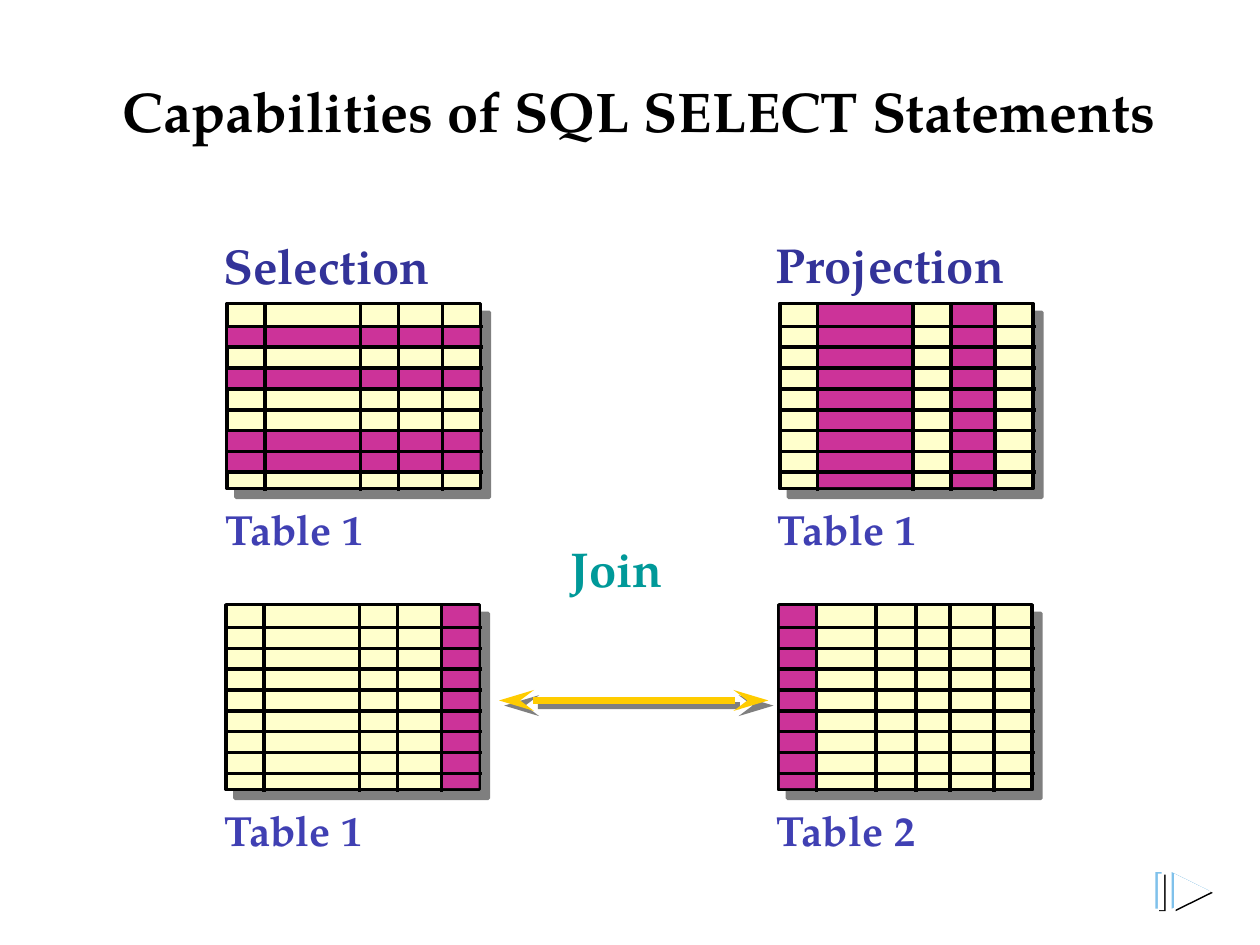
from dataclasses import dataclass

from lxml import etree
from pptx import Presentation
from pptx.dml.color import RGBColor
from pptx.enum import shapes, text
from pptx.oxml import ns
from pptx.util import Cm, Pt


@dataclass(frozen=True)
class Theme:
    font: str = "TeX Gyre Pagella"
    ink: str = "000000"
    paper: str = "FFFFFF"
    cell: str = "FFFFCC"
    highlight: str = "CC3399"
    heading: str = "333399"
    caption: str = "4040B3"
    join: str = "009999"
    arrow: str = "FFCC00"
    button: str = "7FC1EB"
    title_size: int = 32
    heading_size: int = 28
    caption_size: int = 24
    rule: int = 2
    arrow_width: int = 4


@dataclass(frozen=True)
class Box:
    left: float
    top: float
    width: float
    height: float

    def within(self, left, top, width, height):
        return Box(self.left + left, self.top + top, width, height)

    def emu(self):
        return Cm(self.left), Cm(self.top), Cm(self.width), Cm(self.height)


THEME = Theme()
HEADER_HEIGHT = 0.46
ROW_HEIGHT = 0.42
ROWS = 9
FIVE_COLUMNS = (0, 0.76, 2.69, 3.45, 4.34, 5.11)
SIX_COLUMNS = (0, 0.76, 1.96, 2.77, 3.45, 4.34, 5.11)


def rgb(value):
    return RGBColor.from_string(value)


def write(frame, words, *, size, color, align=text.PP_ALIGN.LEFT):
    paragraph = frame.paragraphs[0]
    paragraph.alignment = align
    run = paragraph.add_run()
    run.text = words
    run.font.name = THEME.font
    run.font.size = Pt(size)
    run.font.bold = True
    run.font.color.rgb = rgb(color)


def label(slide, box, words, **style):
    frame = slide.shapes.add_textbox(*box.emu()).text_frame
    frame.word_wrap = False
    frame.auto_size = text.MSO_AUTO_SIZE.SHAPE_TO_FIT_TEXT
    write(frame, words, **style)


def cast_shadow(effects, distance):
    shadow = etree.SubElement(effects, ns.qn("a:outerShdw"), dist=str(Pt(distance)),
                              dir="2700000", algn="ctr", rotWithShape="0")
    color = etree.SubElement(shadow, ns.qn("a:srgbClr"), val=THEME.ink)
    etree.SubElement(color, ns.qn("a:alpha"), val="50000")


def paint(shape, color):
    shape.shadow.inherit = False
    shape.fill.solid()
    shape.fill.fore_color.rgb = rgb(color)
    shape.line.fill.background()


def block(parent, box, color):
    rect = parent.shapes.add_shape(shapes.MSO_SHAPE.RECTANGLE, *box.emu())
    paint(rect, color)
    return rect


def line(slide, start, end, color, width):
    ends = [Cm(value) for value in (*start, *end)]
    connector = slide.shapes.add_connector(shapes.MSO_CONNECTOR.STRAIGHT, *ends)
    connector.line.color.rgb = rgb(color)
    connector.line.width = Pt(width)
    effects = etree.SubElement(connector._element.spPr, ns.qn("a:effectLst"))
    return connector, effects


def draw_title(slide, box, words):
    title = slide.shapes.title
    title.left, title.top, title.width, title.height = box.emu()
    frame = title.text_frame
    frame.word_wrap = True
    frame.auto_size = text.MSO_AUTO_SIZE.NONE
    frame.vertical_anchor = text.MSO_ANCHOR.TOP
    write(frame, words, size=THEME.title_size, color=THEME.ink,
          align=text.PP_ALIGN.CENTER)


def draw_grid(slide, box, caption, columns, marked_rows=(), marked_columns=()):
    row_edges = [0] + [HEADER_HEIGHT + ROW_HEIGHT * i for i in range(ROWS - 1)]
    row_edges.append(box.height)
    sheet = block(slide, box, THEME.cell)
    sheet.line.color.rgb = rgb(THEME.ink)
    sheet.line.width = Pt(THEME.rule)
    cast_shadow(sheet._element.spPr.find(ns.qn("a:effectLst")), 7.1)

    marks = slide.shapes.add_group_shape()
    for first, last in marked_rows:
        top, bottom = row_edges[first], row_edges[last + 1]
        block(marks, box.within(0.02, top, box.width - 0.04, bottom - top), THEME.highlight)
    for column in marked_columns:
        left, right = columns[column:column + 2]
        block(marks, box.within(left + 0.02, 0.03, right - left - 0.04, box.height - 0.06),
              THEME.highlight)

    for edge in row_edges[1:-1]:
        y = box.top + edge
        line(slide, (box.left - 0.03, y), (box.left + box.width + 0.05, y),
             THEME.ink, THEME.rule)
    for edge in columns[1:-1]:
        x = box.left + edge
        line(slide, (x, box.top - 0.03), (x, box.top + box.height + 0.05),
             THEME.ink, THEME.rule)
    label(slide, box.within(-0.29, 3.9, 3.3, 1.3), caption,
          size=THEME.caption_size, color=THEME.caption)


def draw_heading(slide, box, words, color):
    label(slide, box, words, size=THEME.heading_size, color=color)


def draw_join_arrow(slide, box):
    y = box.top + box.height / 2
    arrow, effects = line(slide, (box.left, y), (box.left + box.width, y),
                          THEME.arrow, THEME.arrow_width)
    outline = arrow._element.spPr.find(ns.qn("a:ln"))
    for end in ("a:headEnd", "a:tailEnd"):
        etree.SubElement(outline, ns.qn(end), type="stealth", w="med", len="lg")
    cast_shadow(effects, 4.2)


def draw_next_button(slide, box):
    layers = ((0.08, 0.05, THEME.ink), (0, 0, THEME.button), (0.05, 0.03, THEME.paper))
    button = slide.shapes.add_group_shape()
    for dx, dy, color in layers:
        block(button, box.within(dx, dy, 0.13, box.height), color)
    for dx, dy, color in layers:
        left, top = box.left + 0.33 + dx, box.top + dy
        right, bottom = box.left + box.width + dx, top + box.height
        outline = button.shapes.build_freeform(Cm(right), Cm((top + bottom) / 2))
        outline.add_line_segments([(Cm(left), Cm(top)), (Cm(left), Cm(bottom))])
        paint(outline.convert_to_shape(), color)


def main():
    deck = Presentation()
    deck.slide_width, deck.slide_height = Cm(25.4), Cm(19.05)
    slide = deck.slides.add_slide(deck.slide_layouts[5])
    draw_title(slide, Box(2.11, 1.42, 21.56, 2.44), "Capabilities of SQL SELECT Statements")

    selection = Box(4.58, 6.12, 5.11, 3.73)
    projection = Box(15.72, 6.12, 5.11, 3.73)
    join_left = Box(4.56, 12.19, 5.11, 3.73)
    join_right = Box(15.7, 12.19, 5.11, 3.73)
    draw_grid(slide, selection, "Table 1", FIVE_COLUMNS,
              marked_rows=((1, 1), (3, 3), (6, 7)))
    draw_grid(slide, projection, "Table 1", FIVE_COLUMNS, marked_columns=(1, 3))
    draw_grid(slide, join_left, "Table 1", FIVE_COLUMNS, marked_columns=(4,))
    draw_grid(slide, join_right, "Table 2", SIX_COLUMNS, marked_columns=(0,))

    draw_heading(slide, selection.within(-0.33, -1.5, 4.9, 1.45), "Selection", THEME.heading)
    draw_heading(slide, projection.within(-0.33, -1.52, 5.33, 1.45), "Projection",
                 THEME.heading)
    draw_heading(slide, Box(11.25, 10.74, 2.54, 1.45), "Join", THEME.join)
    draw_join_arrow(slide, Box(10.06, 13.62, 5.43, 1))
    draw_next_button(slide, Box(23.29, 17.58, 1.08, 0.74))
    deck.save("out.pptx")


if __name__ == "__main__":
    main()
